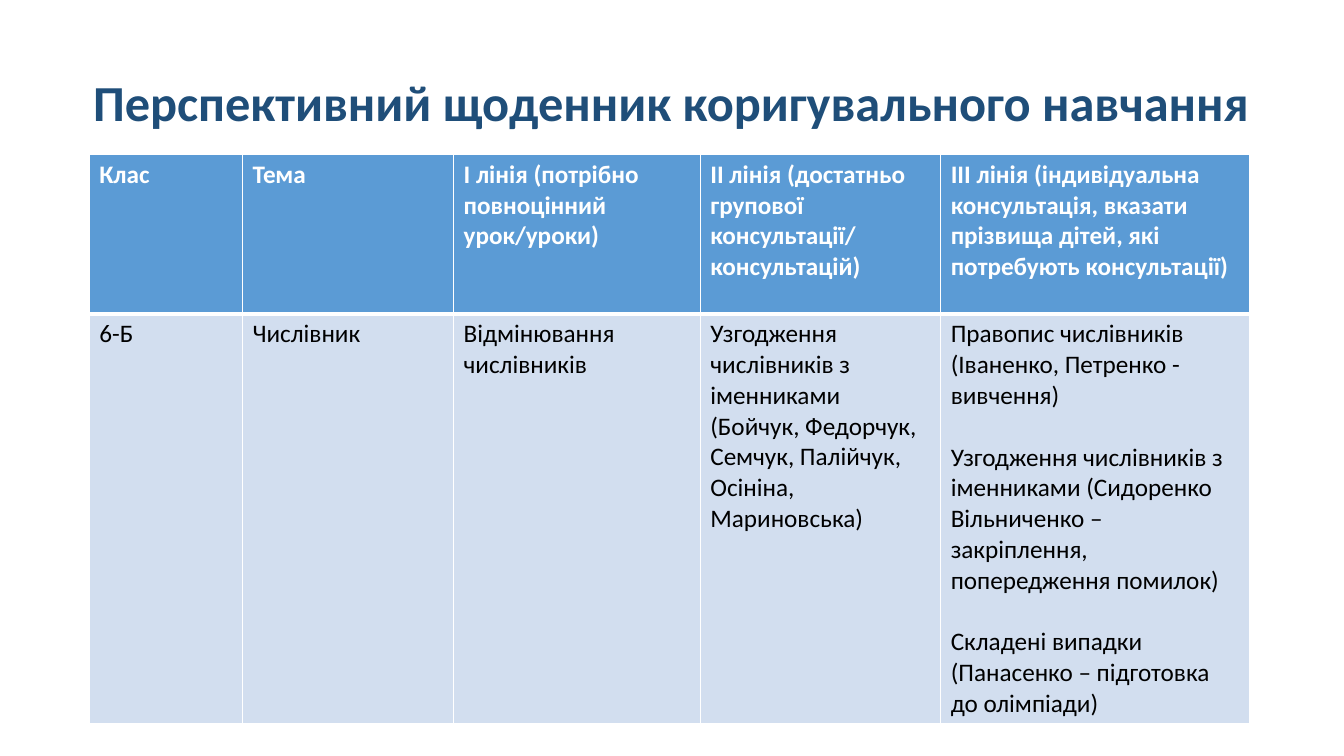
from dataclasses import dataclass

from lxml.etree import SubElement
from pptx import Presentation
from pptx.dml.color import RGBColor
from pptx.enum.text import MSO_ANCHOR as Anchor, PP_ALIGN as Align
from pptx.oxml.ns import qn
from pptx.slide import Slide
from pptx.table import _Cell as Cell
from pptx.text.text import _Paragraph as Paragraph
from pptx.util import Emu, Pt

EMU_PER_PX = 9525
FONT = "Calibri"
NAVY = RGBColor(0x1F, 0x4E, 0x79)
BLUE = RGBColor(0x5B, 0x9B, 0xD5)
PALE_BLUE = RGBColor(0xD2, 0xDE, 0xEF)
WHITE = RGBColor(0xFF, 0xFF, 0xFF)
BLACK = RGBColor(0x00, 0x00, 0x00)


@dataclass(frozen=True)
class TextStyle:
    size: int
    color: RGBColor
    bold: bool = False


@dataclass(frozen=True)
class RowStyle:
    height: int
    fill: RGBColor
    text: TextStyle
    paragraph_gap: int
    top_border: int
    bottom_border: int


@dataclass(frozen=True)
class LineColumn:
    width: int
    heading: list[str]
    entries: list[str]


TITLE_STYLE = TextStyle(36, NAVY, True)
HEADING_ROW = RowStyle(152, BLUE, TextStyle(18, WHITE, True), 0, 1, 3)
CLASS_ROW = RowStyle(390, PALE_BLUE, TextStyle(18, BLACK), 22, 3, 1)

COLUMNS = [
    LineColumn(146, ["Клас"], ["6-Б"]),
    LineColumn(201, ["Тема"], ["Числівник"]),
    LineColumn(
        235,
        ["І лінія (потрібно повноцінний урок/уроки)"],
        ["Відмінювання числівників"],
    ),
    LineColumn(
        229,
        ["ІІ лінія (достатньо групової консультації/", "консультацій)"],
        ["Узгодження числівників з іменниками (Бойчук, Федорчук, "
         "Семчук, Палійчук, Осініна, Мариновська)"],
    ),
    LineColumn(
        294,
        ["ІІІ лінія (індивідуальна консультація, вказати прізвища дітей, "
         "які потребують консультації)"],
        ["Правопис числівників (Іваненко, Петренко - вивчення)",
         "Узгодження числівників з іменниками (Сидоренко Вільниченко – "
         "закріплення, попередження помилок)",
         "Складені випадки (Панасенко – підготовка до олімпіади)"],
    ),
]


def px(length: int) -> Emu:
    return Emu(length * EMU_PER_PX)


def add_run(paragraph: Paragraph, text: str, style: TextStyle) -> None:
    run = paragraph.add_run()
    run.text = text
    run.font.name = FONT
    run.font.size = Pt(style.size)
    run.font.bold = style.bold
    run.font.color.rgb = style.color


def add_border(cell: Cell, side: str, points: int) -> None:
    properties = cell._tc.get_or_add_tcPr()
    line = SubElement(properties, qn(f"a:ln{side}"), w=str(Pt(points)))
    fill = SubElement(line, qn("a:solidFill"))
    SubElement(fill, qn("a:srgbClr"), val=str(WHITE))


def fill_cell(cell: Cell, texts: list[str], style: RowStyle) -> None:
    borders = {"L": 1, "R": 1, "T": style.top_border, "B": style.bottom_border}
    for side, points in borders.items():
        add_border(cell, side, points)
    cell.fill.solid()
    cell.fill.fore_color.rgb = style.fill
    frame = cell.text_frame
    for index, text in enumerate(texts):
        paragraph = frame.add_paragraph() if index else frame.paragraphs[0]
        if index:
            paragraph.space_before = Pt(style.paragraph_gap)
        add_run(paragraph, text, style.text)


def add_title(slide: Slide, text: str) -> None:
    title = slide.shapes.add_textbox(px(53), px(31), px(1173), px(139))
    frame = title.text_frame
    frame.word_wrap = True
    frame.vertical_anchor = Anchor.MIDDLE
    paragraph = frame.paragraphs[0]
    paragraph.alignment = Align.CENTER
    paragraph.line_spacing = 0.9
    add_run(paragraph, text, TITLE_STYLE)


def add_diary(slide: Slide) -> None:
    row_styles = [HEADING_ROW, CLASS_ROW]
    width = sum(column.width for column in COLUMNS)
    height = sum(style.height for style in row_styles)
    diary = slide.shapes.add_table(
        len(row_styles), len(COLUMNS), px(85), px(147), px(width), px(height)
    ).table
    for row, style in zip(diary.rows, row_styles):
        row.height = px(style.height)
    for index, column in enumerate(COLUMNS):
        diary.columns[index].width = px(column.width)
        fill_cell(diary.cell(0, index), column.heading, HEADING_ROW)
        fill_cell(diary.cell(1, index), column.entries, CLASS_ROW)


def main() -> None:
    presentation = Presentation()
    presentation.slide_width = px(1280)
    presentation.slide_height = px(720)
    slide = presentation.slides.add_slide(presentation.slide_layouts[6])
    add_title(slide, "Перспективний щоденник коригувального навчання")
    add_diary(slide)
    presentation.save("out.pptx")


if __name__ == "__main__":
    main()
